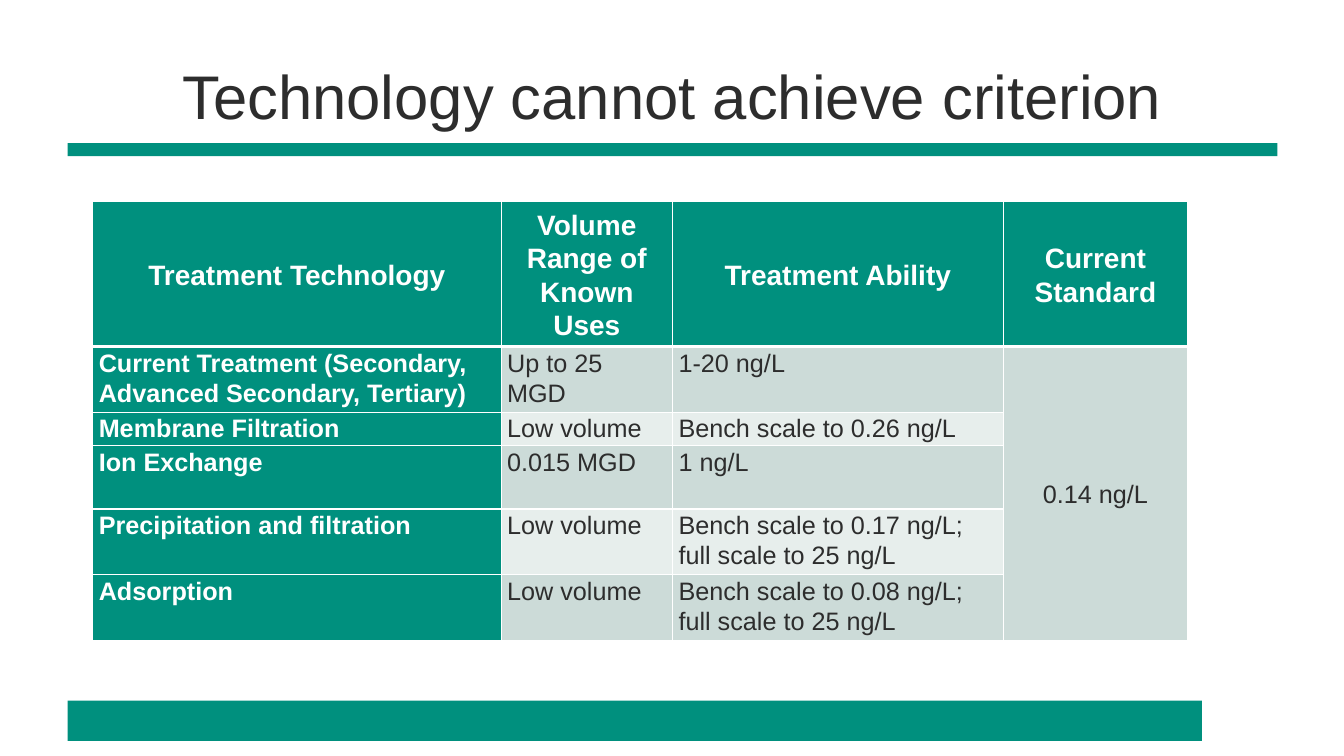
from lxml.etree import SubElement
from pptx import Presentation
from pptx.dml.color import RGBColor
from pptx.enum.shapes import MSO_SHAPE
from pptx.enum.text import MSO_ANCHOR, PP_ALIGN
from pptx.oxml.ns import qn
from pptx.util import Pt

EMU_PER_PX = 9144
COLORS = {
    "green": "00907E",
    "ink": "2D2D2D",
    "white": "FFFFFF",
    "band_dark": "CCDBD8",
    "band_light": "E7EEEC",
}
COLUMN_WIDTHS = [405, 170, 328, 183]
ROW_HEIGHTS = [133, 63, 31, 63, 63, 63]
TREATMENTS = [
    ["Treatment Technology", "Volume Range of Known Uses", "Treatment Ability", "Current Standard"],
    ["Current Treatment (Secondary, Advanced Secondary, Tertiary)", "Up to 25 MGD", "1-20 ng/L", "0.14 ng/L"],
    ["Membrane Filtration", "Low volume", "Bench scale to 0.26 ng/L", ""],
    ["Ion Exchange", "0.015 MGD", "1 ng/L", ""],
    ["Precipitation and filtration", "Low volume", "Bench scale to 0.17 ng/L;\nfull scale to 25 ng/L", ""],
    ["Adsorption", "Low volume", "Bench scale to 0.08 ng/L;\nfull scale to 25 ng/L", ""],
]


def px(length):
    return length * EMU_PER_PX


def color(name):
    return RGBColor.from_string(COLORS[name])


def apply_format(target, values):
    for name, value in values.items():
        setattr(target, name, value)


class SlideBuilder:
    def __init__(self, presentation, font_name):
        self.slide = presentation.slides.add_slide(presentation.slide_layouts[6])
        self.font_name = font_name

    def fill_text(self, text_frame, text, size, color_name, bold=False, **paragraph_format):
        text_frame.text = text
        for paragraph in text_frame.paragraphs:
            apply_format(paragraph, paragraph_format)
            for run in paragraph.runs:
                apply_format(run.font, {"name": self.font_name, "size": Pt(size), "bold": bold})
                run.font.color.rgb = color(color_name)

    def bar(self, left, top, width, height):
        shape = self.slide.shapes.add_shape(
            MSO_SHAPE.RECTANGLE, px(left), px(top), px(width), px(height))
        shape.shadow.inherit = False
        shape.fill.solid()
        shape.fill.fore_color.rgb = color("green")
        shape.line.fill.background()

    def title(self, text, left, top, width, height):
        box = self.slide.shapes.add_textbox(px(left), px(top), px(width), px(height))
        apply_format(box.text_frame, {"word_wrap": True, "vertical_anchor": MSO_ANCHOR.MIDDLE})
        self.fill_text(box.text_frame, text, 44, "ink", alignment=PP_ALIGN.CENTER)

    def borders(self, cell, widths):
        """Draw white cell borders; widths maps L, R, T and B to points."""
        properties = cell._tc.get_or_add_tcPr()
        for index, (side, width) in enumerate(widths.items()):
            line = SubElement(properties, qn(f"a:ln{side}"), w=str(Pt(width)))
            fill = SubElement(line, qn("a:solidFill"))
            SubElement(fill, qn("a:srgbClr"), val=COLORS["white"])
            properties.insert(index, line)

    def cell(self, cell, text, row, column):
        is_header = row == 0
        is_label = is_header or column == 0
        is_standard = column == 3
        is_centered = is_header or is_standard
        apply_format(cell, {
            "margin_left": px(6), "margin_right": px(6),
            "margin_top": px(1), "margin_bottom": 0,
            "vertical_anchor": MSO_ANCHOR.MIDDLE if is_centered else MSO_ANCHOR.TOP,
        })
        band = "band_dark" if is_standard or row % 2 else "band_light"
        cell.fill.solid()
        cell.fill.fore_color.rgb = color("green" if is_label else band)
        self.borders(cell, {"L": 1, "R": 1, "T": 3 if row == 1 else 1, "B": 3 if is_header else 1})
        if text:
            self.fill_text(
                cell.text_frame, text, 20 if is_header else 18,
                "white" if is_label else "ink", bold=is_label, line_spacing=1.07,
                alignment=PP_ALIGN.CENTER if is_centered else PP_ALIGN.LEFT)

    def table(self, rows, left, top, column_widths, row_heights):
        table = self.slide.shapes.add_table(
            len(rows), len(column_widths), px(left), px(top),
            px(sum(column_widths)), px(sum(row_heights))).table
        table.horz_banding = False
        for column, width in zip(table.columns, column_widths):
            column.width = px(width)
        for row, height in zip(table.rows, row_heights):
            row.height = px(height)
        for row, texts in enumerate(rows):
            for column, text in enumerate(texts):
                self.cell(table.cell(row, column), text, row, column)
        table.cell(1, 3).merge(table.cell(len(rows) - 1, 3))


def main():
    presentation = Presentation()
    apply_format(presentation, {"slide_width": px(1333), "slide_height": px(750)})
    builder = SlideBuilder(presentation, "Arial")
    builder.bar(67, 142, 1200, 13)
    builder.bar(67, 695, 1125, 40)
    builder.title("Technology cannot achieve criterion", 67, 33, 1200, 122)
    builder.table(TREATMENTS, 92, 200, COLUMN_WIDTHS, ROW_HEIGHTS)
    presentation.save("out.pptx")


if __name__ == "__main__":
    main()
